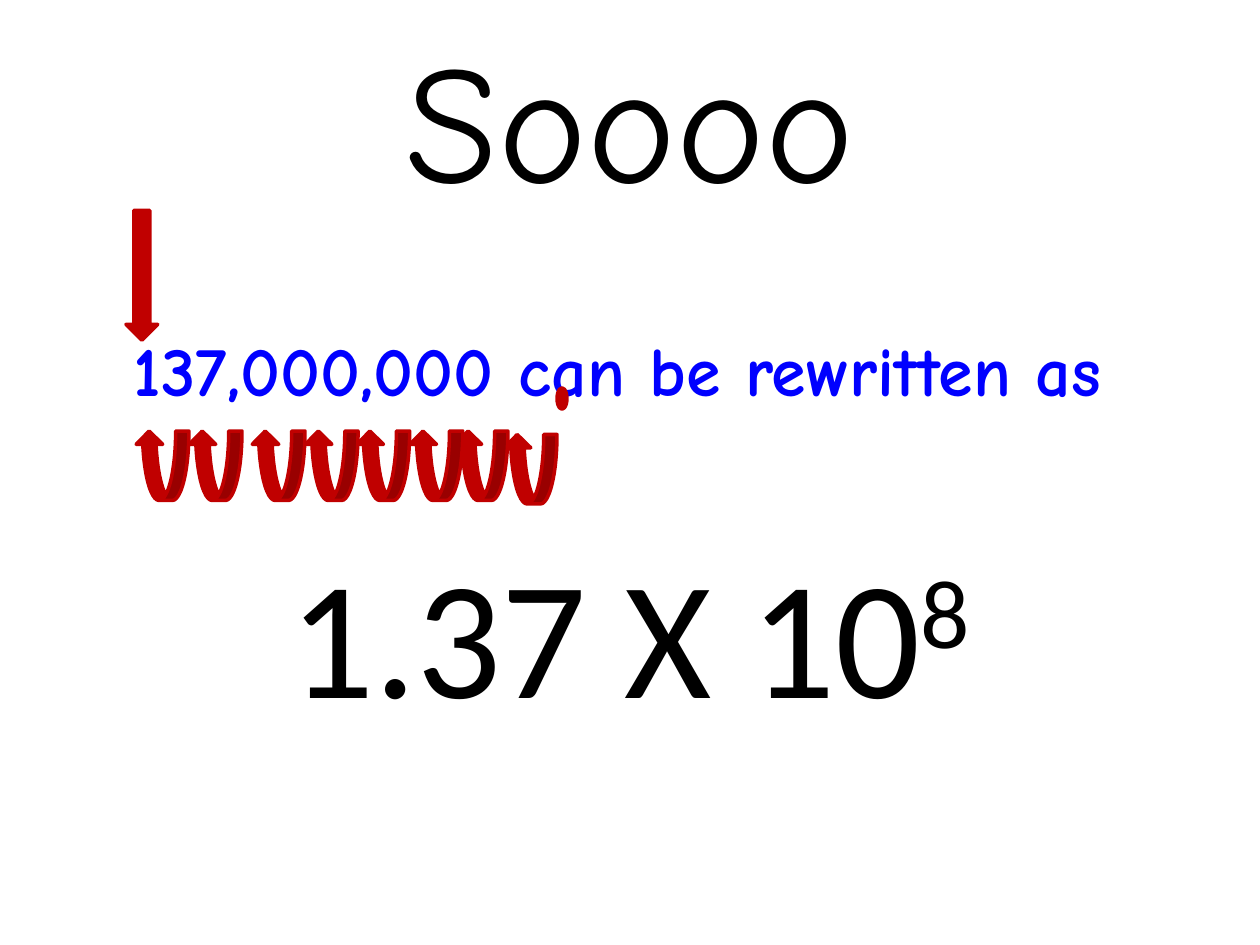
from pptx import Presentation
from pptx.dml.color import RGBColor
from pptx.enum.shapes import MSO_SHAPE as Shape
from pptx.enum.text import MSO_ANCHOR as Anchor, MSO_AUTO_SIZE as AutoSize, PP_ALIGN as Align
from pptx.util import Cm, Pt

# Content: each line is a list of (text, superscript percent)
TITLE = [("Soooo", 0)]
STATEMENT = [("137,000,000 can be rewritten as ", 0)]
ANSWER = [("1.37 X 10", 0), ("8", 30)]

# Hops of the decimal point, right to left: (left, top) in cm
HOP_TOP = 8.69
HOPS = [(10.16, 8.76)] + [(left, HOP_TOP) for left in (9.17, 8.26, 7.19, 6.15, 5.08, 3.81, 2.74)]
HOP_SIZE = (1.07, 1.4)
DECIMAL_POINT = (11.23, 7.82, 0.2, 0.43)
TARGET_ARROW = (2.54, 4.24, 0.64, 2.62)

THEME = {
    "marker": RGBColor(0xC0, 0x00, 0x00),
    "marker_line": Pt(2),
    "title": {"name": "Comic Neue", "size": Pt(96), "bold": False, "color": RGBColor(0, 0, 0)},
    "statement": {"name": "Comic Neue", "size": Pt(40), "bold": True, "color": RGBColor(0, 0, 0xFF)},
    "answer": {"name": "Calibri", "size": Pt(96), "bold": False, "color": RGBColor(0, 0, 0)},
}
HANGING = Cm(0.95)


def place(shape, left, top, width, height):
    box = {"left": left, "top": top, "width": width, "height": height}
    for side, value in box.items():
        setattr(shape, side, Cm(value))


def write(paragraph, parts, style):
    paragraph.alignment = Align.CENTER
    for text, raised in parts:
        run = paragraph.add_run()
        run.text = text
        for key, value in style.items():
            if key == "color":
                run.font.color.rgb = value
            else:
                setattr(run.font, key, value)
        if raised:
            run.font._element.set("baseline", str(raised * 1000))


def add_marker(slide, kind, left, top, width, height, mirrored=False):
    marker = slide.shapes.add_shape(kind, Cm(left), Cm(top), Cm(width), Cm(height))
    marker.shadow.inherit = False
    marker.fill.solid()
    marker.fill.fore_color.rgb = THEME["marker"]
    marker.line.color.rgb = THEME["marker"]
    marker.line.width = THEME["marker_line"]
    if mirrored:
        marker._element.spPr.xfrm.set("flipH", "1")


def main():
    deck = Presentation()
    deck.slide_width, deck.slide_height = Cm(25.4), Cm(19.05)
    slide = deck.slides.add_slide(deck.slide_layouts[5])

    # Title
    title = slide.shapes.title
    place(title, 1.27, 0.76, 22.86, 3.18)
    title.text_frame.auto_size = AutoSize.NONE
    title.text_frame.vertical_anchor = Anchor.MIDDLE
    write(title.text_frame.paragraphs[0], TITLE, THEME["title"])

    # Number and its scientific notation
    body = slide.shapes.add_textbox(Cm(1.27), Cm(6.45), Cm(22.86), Cm(10.57)).text_frame
    body.word_wrap = True
    statement, answer = body.paragraphs[0], body.add_paragraph()
    write(statement, STATEMENT, THEME["statement"])
    write(answer, ANSWER, THEME["answer"])
    answer.space_before = Pt(69)
    for line in (statement, answer):
        properties = line._p.get_or_add_pPr()
        properties.set("marL", str(HANGING))
        properties.set("indent", str(-HANGING))

    # Decimal point, where it goes, and its hops
    add_marker(slide, Shape.OVAL, *DECIMAL_POINT)
    add_marker(slide, Shape.DOWN_ARROW, *TARGET_ARROW)
    for hop in HOPS:
        add_marker(slide, Shape.CURVED_UP_ARROW, *hop, *HOP_SIZE, mirrored=True)

    deck.save("out.pptx")


if __name__ == "__main__":
    main()
